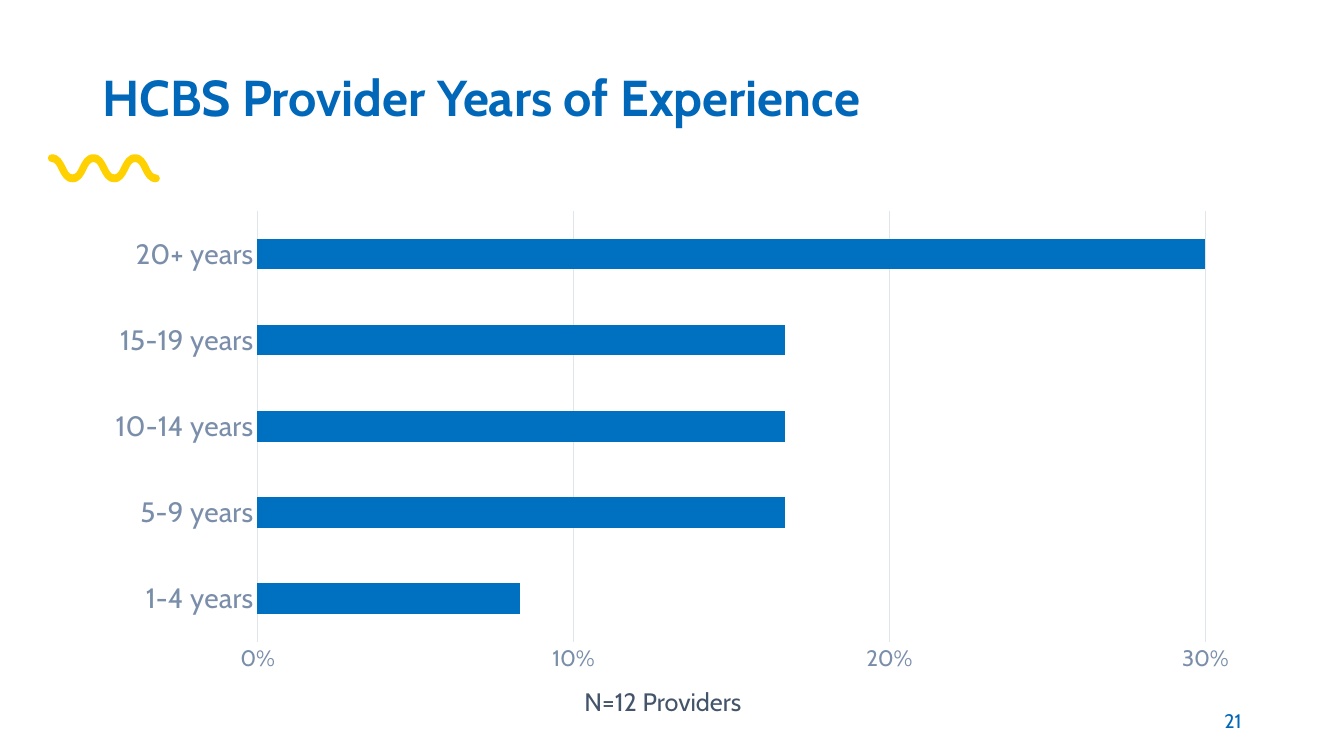
"""Build the slide on HCBS provider years of experience."""
from lxml import etree
from pptx import Presentation
from pptx.chart.data import CategoryChartData
from pptx.dml.color import RGBColor
from pptx.enum.chart import XL_CHART_TYPE, XL_TICK_MARK
from pptx.enum.text import MSO_ANCHOR, PP_ALIGN
from pptx.oxml.ns import qn
from pptx.util import Pt

FONT = "Cabin"


def rgb(value):
    return RGBColor.from_string(value)


def add_text(text, left, top, width, height, size, color, bold=False,
             anchor=MSO_ANCHOR.TOP, align=PP_ALIGN.LEFT, spacing=1.0):
    tf = s.shapes.add_textbox(Pt(left), Pt(top), Pt(width), Pt(height)).text_frame
    tf.word_wrap = True
    tf.vertical_anchor = anchor
    p = tf.paragraphs[0]
    p.alignment = align
    p.line_spacing = spacing
    r = p.add_run()
    r.text = text
    r.font.name = FONT
    r.font.size = Pt(size)
    r.font.bold = bold
    r.font.color.rgb = rgb(color)


prs = Presentation()
prs.slide_width, prs.slide_height = Pt(960), Pt(540)
s = prs.slides.add_slide(prs.slide_layouts[6])

wave_left, wave_right, half_period = 37, 111.4, 14.88
crest, trough, stroke = 110.2, 124.6, 5.6
center_x, center_y = (wave_left + wave_right) / 2, (crest + trough + stroke) / 2
falling = [(0, crest), (5.5, crest), (7.7, 115), (9.7, 118.8),
           (11.3, 122.3), (12.5, trough), (half_period, trough)]
rising = [(half_period - x, y) for x, y in falling[::-1]]
half_outline = [(wave_left, crest + stroke), (35.4, crest + stroke), (34.2, 114.5),
                (34.2, 113), (34.2, 111.5), (35.4, crest), (wave_left, crest)]
for i in range(5):
    curve = rising if i % 2 else falling
    half_outline += [(wave_left + half_period * i + x, y) for x, y in curve[1:]]
turned = [(2 * center_x - x, 2 * center_y - y) for x, y in half_outline]
outline = [(Pt(x), Pt(y)) for x, y in half_outline + turned[1:]]
builder = s.shapes.build_freeform(*outline[0])
builder.add_line_segments(outline[1:], close=True)
squiggle = builder.convert_to_shape()
wave_path = next(squiggle.element.iter(qn("a:path")))
lines = wave_path.findall(qn("a:lnTo"))
for i in range(0, len(lines), 3):
    bezier = etree.Element(qn("a:cubicBezTo"))
    lines[i].addprevious(bezier)
    for segment in lines[i:i + 3]:
        bezier.append(segment[0])
        wave_path.remove(segment)
squiggle.shadow.inherit = False
squiggle.fill.solid()
squiggle.fill.fore_color.rgb = rgb("FFD100")
squiggle.line.fill.background()

add_text("HCBS Provider Years of Experience", 66, 28.8, 828, 66, 36, "0067B9",
         bold=True, anchor=MSO_ANCHOR.BOTTOM, spacing=0.9)

data = CategoryChartData(number_format="0%")
data.categories = ["1-4 years", "5-9 years", "10-14 years", "15-19 years", "20+ years"]
data.add_series("Series 1", [0.083, 0.167, 0.167, 0.167, 0.417])
chart = s.shapes.add_chart(XL_CHART_TYPE.BAR_CLUSTERED, Pt(66), Pt(144),
                           Pt(828), Pt(342.7), data).chart
chart.has_legend = False
chart.has_title = False
chart.font.name = FONT
chart.font.size = Pt(10)
chart.font.color.rgb = rgb("44546A")

plot = chart.plots[0]
plot.gap_width = 182
plot.vary_by_categories = False
fill = plot.series[0].format.fill
fill.solid()
fill.fore_color.rgb = rgb("0070C0")

cat_axis, val_axis = chart.category_axis, chart.value_axis
for axis, size in ((cat_axis, 20), (val_axis, 16)):
    axis.major_tick_mark = axis.minor_tick_mark = XL_TICK_MARK.NONE
    font = axis.tick_labels.font
    font.name = FONT
    font.size = Pt(size)
    font.color.rgb = rgb("7A8EAA")
cat_axis.has_major_gridlines = False
val_axis.has_major_gridlines = True
for line in (cat_axis.format.line, val_axis.major_gridlines.format.line):
    line.color.rgb = rgb("E0E5EB")
    line.width = Pt(0.75)
val_axis.format.line.fill.background()
val_axis.maximum_scale = 0.3
val_axis.major_unit = 0.1
val_axis.tick_labels.number_format = "0%"
val_axis.tick_labels.number_format_is_linked = False

add_text("N=12 Providers", 410.4, 486.7, 376, 29, 18, "44546A")
add_text("21", 678, 500.5, 216, 28.75, 14, "0067B9",
         anchor=MSO_ANCHOR.MIDDLE, align=PP_ALIGN.RIGHT)

prs.save("out.pptx")
